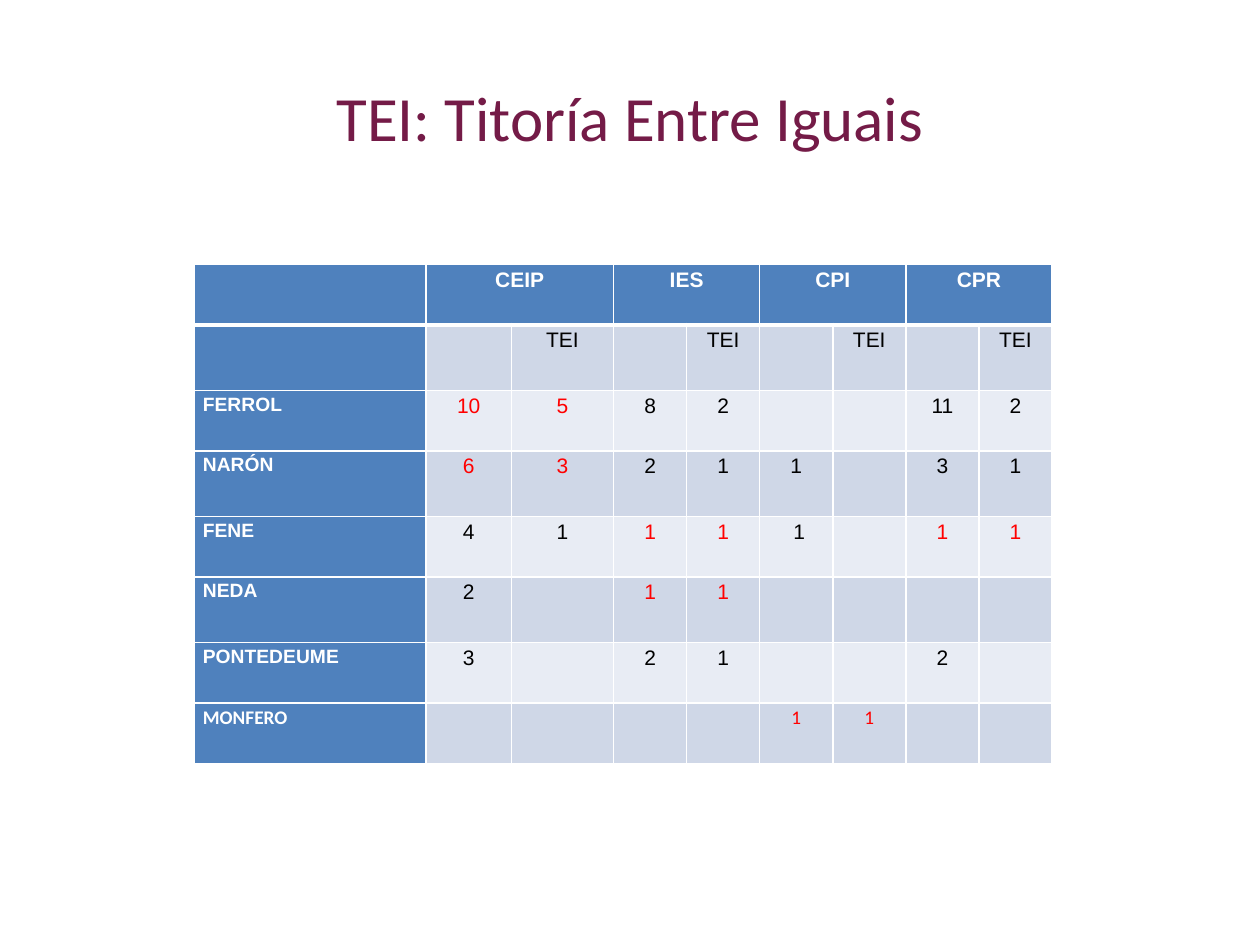
from dataclasses import dataclass

from lxml.etree import SubElement
from pptx import Presentation
from pptx.dml.color import RGBColor
from pptx.enum.text import MSO_ANCHOR, PP_ALIGN
from pptx.oxml import parse_xml
from pptx.oxml.ns import nsdecls
from pptx.util import Inches, Pt


@dataclass(frozen=True)
class Theme:
    """Colours, fonts and type sizes of the slide."""
    plum: RGBColor = RGBColor(0x74, 0x1B, 0x47)
    blue: RGBColor = RGBColor(0x4F, 0x81, 0xBD)
    bands: tuple = (RGBColor(0xCF, 0xD7, 0xE7), RGBColor(0xE8, 0xEC, 0xF4))
    white: RGBColor = RGBColor(0xFF, 0xFF, 0xFF)
    black: RGBColor = RGBColor(0, 0, 0)
    red: RGBColor = RGBColor(0xFF, 0, 0)
    sans: str = "Arial"
    human: str = "Calibri"
    title_size: int = 36
    body_size: int = 12
    town_size: int = 11


THEME = Theme()
SCHOOL_TYPES = ["CEIP", "IES", "CPI", "CPR"]
SUBHEADS = ["", "TEI"] * len(SCHOOL_TYPES)
TOWNS = [
    ("FERROL", ["10", "5", "8", "2", "", "", "11", "2"], {1, 2}),
    ("NARÓN", ["6", "3", "2", "1", "1", "", "3", "1"], {1, 2}),
    ("FENE", ["4", "1", "1", "1", " 1", "", "1", "1"], {3, 4, 7, 8}),
    ("NEDA", ["2", "", "1", "1", "", "", "", ""], {3, 4}),
    ("PONTEDEUME", ["3", "", "2", "1", "", "", "2", ""], set()),
    ("MONFERO", ["", "", "", "", "1", "1", "", ""], {5, 6}),
]
COLUMN_WIDTHS = [1.84, 0.68, 0.81] + [0.58] * 6
ROW_HEIGHTS = [0.48, 0.52, 0.48, 0.52, 0.48, 0.52, 0.48, 0.48]


def style_run(run, size, font, color, bold=False):
    """Set the type of one run."""
    run.font.size, run.font.name, run.font.bold = Pt(size), font, bold
    run.font.color.rgb = color


def set_borders(cell, top, bottom):
    """Draw white borders around a cell, with the top and bottom widths in points."""
    properties = cell._tc.get_or_add_tcPr()
    for position, (side, width) in enumerate(zip("LRTB", (1, 1, top, bottom))):
        properties.insert(position, parse_xml(
            f'<a:ln{side} {nsdecls("a")} w="{Pt(width)}"><a:solidFill>'
            f'<a:srgbClr val="{THEME.white}"/></a:solidFill></a:ln{side}>'))


def fill_cell(cell, text, fill, color, size, font, bold, align):
    """Write and colour one cell."""
    cell.fill.solid()
    cell.fill.fore_color.rgb = fill
    cell.margin_left = cell.margin_right = Inches(0.07)
    cell.margin_top = cell.margin_bottom = 0
    paragraph = cell.text_frame.paragraphs[0]
    paragraph.alignment, paragraph.line_spacing = align, 1.15
    if text:
        paragraph.text = text
        style_run(paragraph.runs[0], size, font, color, bold)
    else:
        paragraph.font.size = Pt(size)


def add_title(slide, left, top, width, height):
    """Place the centred slide title in its box."""
    title = slide.shapes.add_textbox(left, top, width, height).text_frame
    title.word_wrap = True
    title.vertical_anchor = MSO_ANCHOR.MIDDLE
    title.text = "TEI: Titoría Entre Iguais"
    title.paragraphs[0].alignment = PP_ALIGN.CENTER
    style_run(title.paragraphs[0].runs[0], THEME.title_size, THEME.human, THEME.plum)


def add_school_table(slide, left, top, width, height):
    """Place the table of schools by town and type in its box."""
    headings = [""] + [text for kind in SCHOOL_TYPES for text in (kind, "")]
    rows = [(headings, set()), (["", *SUBHEADS], set())]
    rows += [([town, *counts], reds) for town, counts, reds in TOWNS]
    table = slide.shapes.add_table(
        len(rows), len(COLUMN_WIDTHS), left, top, width, height).table
    table.first_row = table.horz_banding = False
    for column, column_width in zip(table.columns, COLUMN_WIDTHS):
        column.width = Inches(column_width)
    for row, row_height in zip(table.rows, ROW_HEIGHTS):
        row.height = Inches(row_height)

    for r, (texts, reds) in enumerate(rows):
        font = THEME.human if texts[0] == "MONFERO" else THEME.sans
        for c, text in enumerate(texts):
            heading = r == 0 or c == 0
            town = r > 1 and c == 0
            small = town or font == THEME.human
            fill_cell(
                table.cell(r, c), text,
                fill=THEME.blue if heading else THEME.bands[(r + 1) % 2],
                color=THEME.white if heading else THEME.red if c in reds else THEME.black,
                size=THEME.town_size if small else THEME.body_size,
                font=font, bold=heading,
                align=PP_ALIGN.LEFT if town else PP_ALIGN.CENTER)
            set_borders(table.cell(r, c), 3 if r == 1 else 1, 3 if r == 0 else 1)
    for c in range(1, len(COLUMN_WIDTHS), 2):
        table.cell(0, c).merge(table.cell(0, c + 1))


def main():
    """Build and save the slide."""
    deck = Presentation()
    deck.slide_width, deck.slide_height = Inches(10), Inches(7.5)
    slide = deck.slides.add_slide(deck.slide_layouts[6])
    add_title(slide, Inches(0.5), Inches(0.3), Inches(9), Inches(1.25))
    add_school_table(slide, Inches(1.54), Inches(2.1),
                     Inches(sum(COLUMN_WIDTHS)), Inches(sum(ROW_HEIGHTS)))
    deck.save("out.pptx")


if __name__ == "__main__":
    main()
